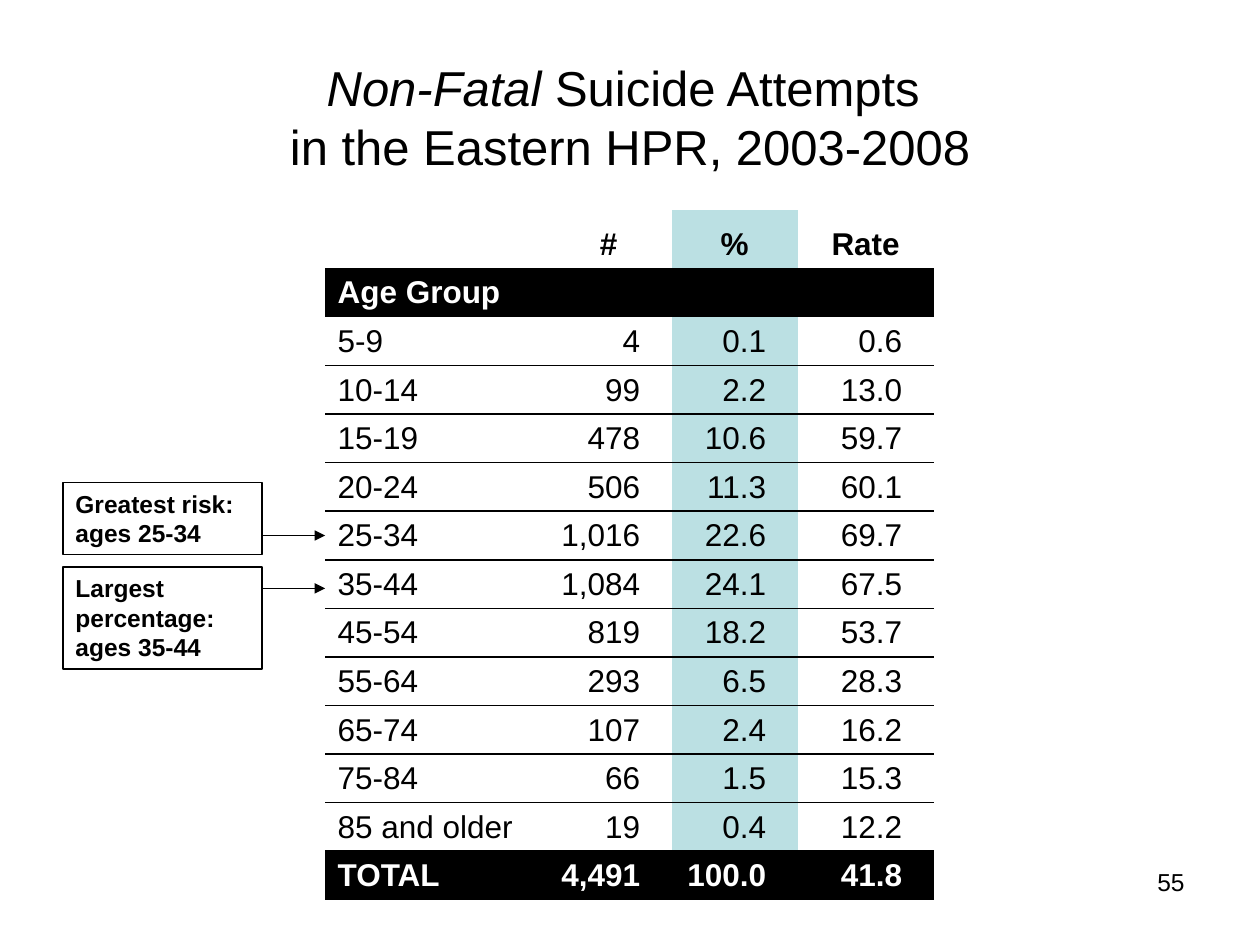
from lxml import etree
from pptx import Presentation
from pptx import util as u
from pptx.dml.color import RGBColor
from pptx.enum import shapes, text
from pptx.oxml import ns

Inches, Pt = u.Inches, u.Pt
COLORS = {"black": "000000", "white": "FFFFFF", "highlight": "BBE0E3"}
FONT = "Arial"
NO_STYLE = "{2D5ABB26-0587-4C30-8999-92F81FD0307C}"
LEFT, CENTER, RIGHT = text.PP_ALIGN.LEFT, text.PP_ALIGN.CENTER, text.PP_ALIGN.RIGHT

HEADER = ["", "#", "%", "Rate"]
GROUP_TITLE = ["Age Group", "", "", ""]
AGE_ROWS = [
    ["5-9", "4", "0.1", "0.6"],
    ["10-14", "99", "2.2", "13.0"],
    ["15-19", "478", "10.6", "59.7"],
    ["20-24", "506", "11.3", "60.1"],
    ["25-34", "1,016", "22.6", "69.7"],
    ["35-44", "1,084", "24.1", "67.5"],
    ["45-54", "819", "18.2", "53.7"],
    ["55-64", "293", "6.5", "28.3"],
    ["65-74", "107", "2.4", "16.2"],
    ["75-84", "66", "1.5", "15.3"],
    ["85 and older", "19", "0.4", "12.2"],
]
TOTAL = ["TOTAL", "4,491", "100.0", "41.8"]
COL_WIDTHS = [1.75, 1, 1, 1.08]
PERCENT_COL = 2

# Text, box top, box height, arrow height on the slide
CALLOUTS = [
    ("Largest percentage: ages 35-44", 4.5, 0.81, 4.67),
    ("Greatest risk: ages 25-34", 3.83, 0.57, 4.25),
]


def rgb(name):
    return RGBColor.from_string(COLORS[name])


def add_text(p, content, size=18, color="black", bold=False, italic=False,
             align=LEFT, spacing=None):
    """Append a run to a paragraph and format both."""
    p.alignment = align
    if spacing:
        p.line_spacing = spacing
    r = p.add_run()
    r.text = content
    r.font.name = FONT
    r.font.size = Pt(size)
    r.font.bold = bold
    r.font.italic = italic
    r.font.color.rgb = rgb(color)


def add_textbox(s, left, top, width, height, anchor=text.MSO_ANCHOR.TOP):
    tf = s.shapes.add_textbox(*map(Inches, (left, top, width, height))).text_frame
    tf.word_wrap = True
    tf.vertical_anchor = anchor
    return tf


def add_title(s):
    p = add_textbox(s, 0.5, 0.3, 9, 1.25, text.MSO_ANCHOR.MIDDLE).paragraphs[0]
    add_text(p, "Non-Fatal", size=28, italic=True, align=CENTER)
    add_text(p, " Suicide Attempts ", size=28, align=CENTER)
    p.add_line_break()
    add_text(p, "in the Eastern HPR, 2003-2008", size=28, align=CENTER)


def add_border(cell, side):
    """Draw a thin black line on one side of a cell: lnT or lnB."""
    ln = etree.SubElement(cell._tc.get_or_add_tcPr(), ns.qn(f"a:{side}"), w=str(Pt(1)))
    fill = etree.SubElement(ln, ns.qn("a:solidFill"))
    etree.SubElement(fill, ns.qn("a:srgbClr"), val=COLORS["black"])


def fill_cell(cell, name):
    if name:
        cell.fill.solid()
        cell.fill.fore_color.rgb = rgb(name)
    else:
        cell.fill.background()


def add_age_table(s):
    rows = [HEADER, GROUP_TITLE, *AGE_ROWS, TOTAL]
    last = len(rows) - 1
    frame = s.shapes.add_table(len(rows), len(HEADER), Inches(2.58), Inches(1.67),
                               Inches(sum(COL_WIDTHS)), Inches(5.47))
    table = frame.table
    table.first_row = table.horz_banding = False
    table._tbl.tblPr.find(ns.qn("a:tableStyleId")).text = NO_STYLE
    for col, width in zip(table.columns, COL_WIDTHS):
        col.width = Inches(width)
    for i, row in enumerate(rows):
        table.rows[i].height = Inches({0: 0.46, last: 0.36}.get(i, 0.3))
        dark = i in (1, last)
        for j, value in enumerate(row):
            cell = table.cell(i, j)
            cell.vertical_anchor = text.MSO_ANCHOR.BOTTOM
            align = LEFT if j == 0 else CENTER if i == 0 else RIGHT
            if align == RIGHT:
                cell.margin_right = Inches(0.25)
            if 2 < i < last:
                add_border(cell, "lnT")
            if 1 < i < last - 1:
                add_border(cell, "lnB")
            fill_cell(cell, "black" if dark else
                      "highlight" if j == PERCENT_COL else None)
            if value:
                add_text(cell.text_frame.paragraphs[0], value, align=align, spacing=0.95,
                         bold=dark or i == 0, color="white" if dark else "black")
    table.cell(1, 0).merge(table.cell(1, len(HEADER) - 1))
    frame.height = Inches(5.47)


def add_callout_box(s, content, top, height):
    sp = s.shapes.add_shape(shapes.MSO_SHAPE.RECTANGLE, Inches(0.5), Inches(top),
                            Inches(1.58), Inches(height))
    sp.shadow.inherit = False
    sp.fill.background()
    sp.line.color.rgb = rgb("black")
    sp.line.width = Pt(0.75)
    tf = sp.text_frame
    tf.word_wrap = True
    tf.vertical_anchor = text.MSO_ANCHOR.TOP
    add_text(tf.paragraphs[0], content, size=14, bold=True)


def add_arrow(s, y):
    """Point from a callout box to the table."""
    line = s.shapes.add_connector(shapes.MSO_CONNECTOR.STRAIGHT, Inches(2.08), Inches(y),
                                  Inches(2.58), Inches(y))
    line.line.color.rgb = rgb("black")
    line.line.width = Pt(0.75)
    etree.SubElement(line.line._get_or_add_ln(), ns.qn("a:tailEnd"), type="triangle")
    etree.SubElement(line._element.spPr, ns.qn("a:effectLst"))


def main():
    prs = Presentation()
    prs.slide_width, prs.slide_height = Inches(10), Inches(7.5)
    s = prs.slides.add_slide(prs.slide_layouts[6])
    number = add_textbox(s, 7.17, 6.83, 2.33, 0.52)
    add_text(number.paragraphs[0], "55", size=14, align=RIGHT)
    add_title(s)
    add_age_table(s)
    for content, top, height, arrow_y in CALLOUTS:
        add_callout_box(s, content, top, height)
        add_arrow(s, arrow_y)
    prs.save("out.pptx")


if __name__ == "__main__":
    main()
